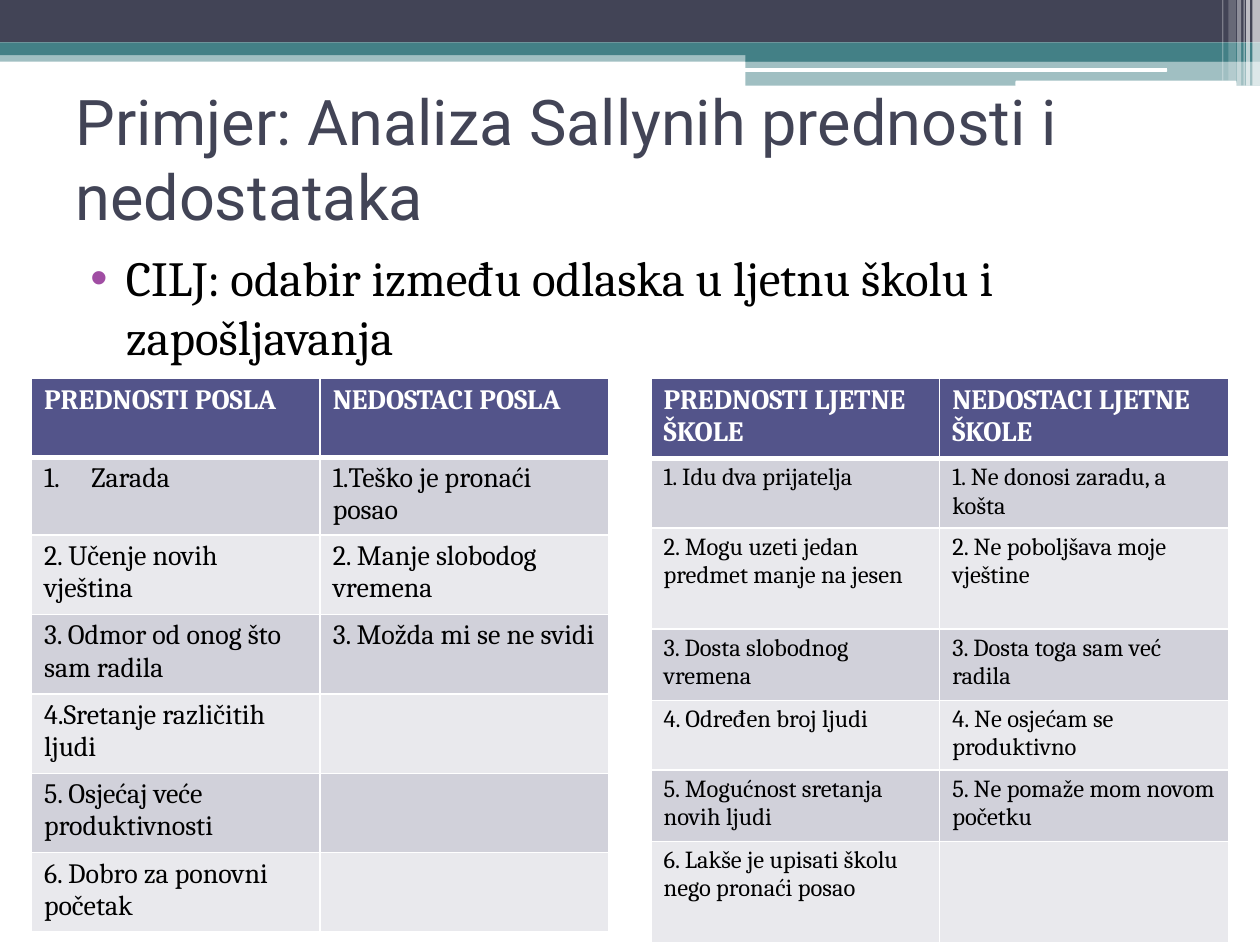
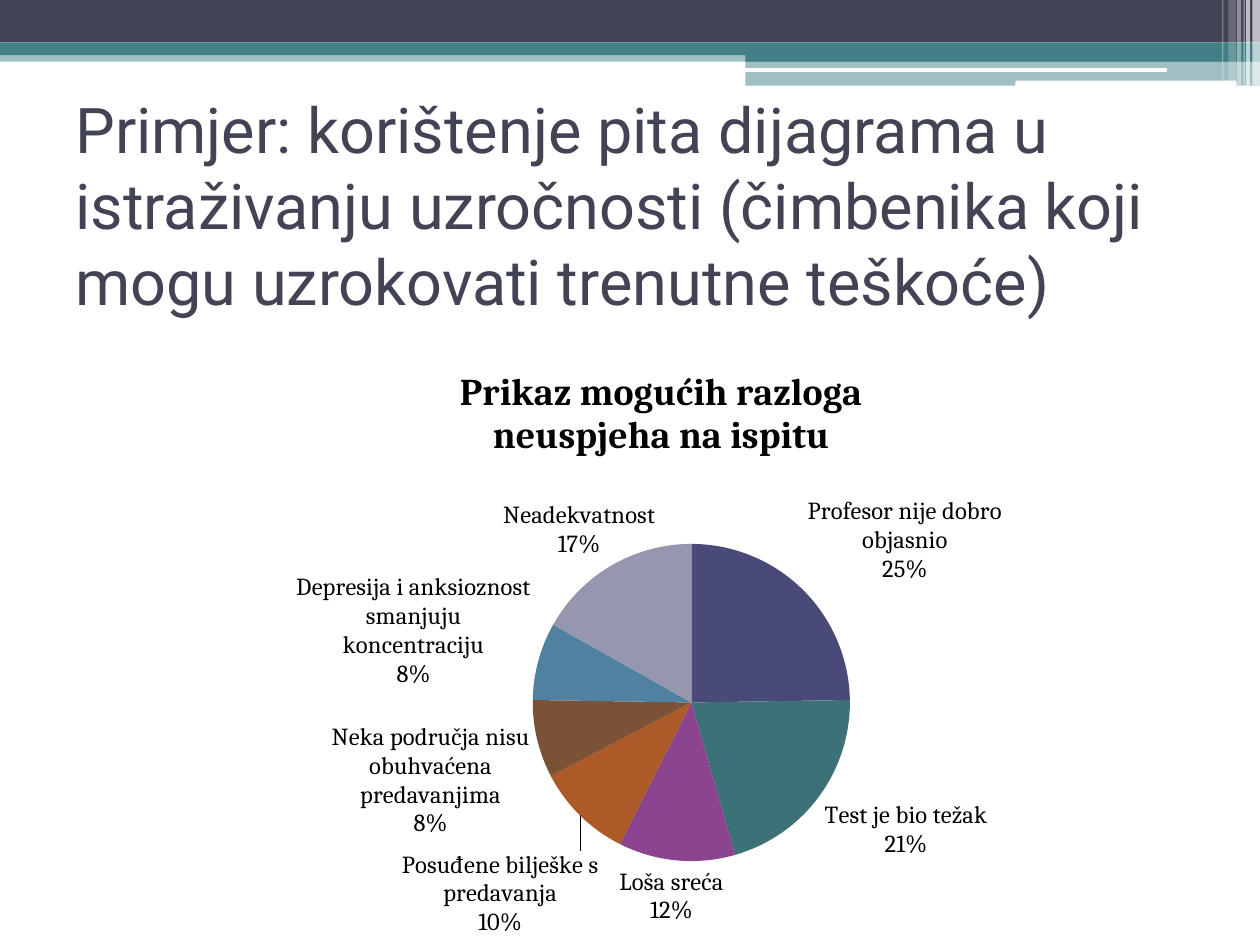
import copy

import pptx
import pptx.chart.data
import pptx.dml.color
import pptx.enum.chart
import pptx.enum.shapes
import pptx.enum.text
import pptx.oxml
import pptx.oxml.ns
import pptx.util
from lxml import etree

Pt = pptx.util.Pt
qn = pptx.oxml.ns.qn
SHAPE = pptx.enum.shapes.MSO_SHAPE

SANS, SERIF = "Roboto", "Cambria"
SLATE, TEAL, WHITE, BLACK, PURPLE = "424456", "438086", "FFFFFF", "000000", "A04DA3"
HEADER, STRIPES = "53548A", ("D1D1DA", "E9E9ED")

# left, top, width, height, colour, opacity in percent
BANDS = [
    (0, 28.8, 720, 6.5, TEAL, 50),
    (0, 0, 720, 24.3, SLATE, 100),
    (0, 24.3, 720, 7.2, TEAL, 100),
    (426, 28.1, 294, 7.2, TEAL, 100),
    (426, 34.6, 294, 14.4, TEAL, 50),
]
PILLS = [
    (425.5, 38.9, 241.4, 2.2, WHITE, 100),
    (580.3, 46.1, 126.3, 3.4, WHITE, 100),
]
# left, width, height, opacity
STRIPS = [
    (715.7, 4.3, 49, 65),
    (712.1, 2.2, 49, 65),
    (710.6, 0.7, 49, 60),
    (707, 2.2, 49, 40),
    (702, 4.3, 46.1, 20),
    (698.4, 0.7, 46.1, 30),
]

ANALYSIS_TITLE = "Primjer: Analiza Sallynih prednosti i nedostataka"
GOAL = "CILJ: odabir između odlaska u ljetnu školu i zapošljavanja"
JOB = {
    "left": 18,
    "size": 16,
    "heights": [45.4, 33.1] + [45.4] * 5,
    "rows": [
        ("PREDNOSTI POSLA", "NEDOSTACI POSLA"),
        ("Zarada", "1.Teško je pronaći posao"),
        ("2. Učenje novih vještina", "2. Manje slobodog vremena"),
        ("3. Odmor od onog što sam radila", "3. Možda mi se ne svidi"),
        ("4.Sretanje različitih ljudi", ""),
        ("5. Osjećaj veće produktivnosti", ""),
        ("6. Dobro za ponovni početak", ""),
    ],
}
SCHOOL = {
    "left": 372,
    "size": 14,
    "heights": [46.1, 25.9, 57.6, 41, 21.6, 41, 57.6],
    "rows": [
        ("PREDNOSTI LJETNE ŠKOLE", "NEDOSTACI LJETNE ŠKOLE"),
        ("1. Idu dva prijatelja", "1. Ne donosi zaradu, a košta"),
        ("2. Mogu uzeti jedan predmet manje na jesen", "2. Ne poboljšava moje vještine"),
        ("3. Dosta slobodnog vremena", "3. Dosta toga sam već radila"),
        ("4. Određen broj ljudi", "4. Ne osjećam se produktivno"),
        ("5. Mogućnost sretanja novih ljudi", "5. Ne pomaže mom novom početku"),
        ("6. Lakše je upisati školu nego pronaći posao", ""),
    ],
}

CAUSES_TITLE = ("Primjer: korištenje pita dijagrama u istraživanju uzročnosti "
                "(čimbenika koji mogu uzrokovati trenutne teškoće)")
CHART_TITLE = ["Prikaz mogućih razloga", "neuspjeha na ispitu"]
# name, percent, colour, label shift as a share of the chart (None: automatic)
CAUSES = [
    ("Profesor nije dobro objasnio", 25, "4A4A79", None),
    ("Test je bio težak", 21, "3C7277", None),
    ("Loša sreća", 12, "8D4490", (0.04, 0)),
    ("Posuđene bilješke s predavanja", 10, "AD5928", (0.02, 0.05)),
    ("Neka područja nisu obuhvaćena predavanjima", 8, "7B5236", (0, -0.03)),
    ("Depresija i anksioznost smanjuju koncentraciju", 8, "5181A0", (0, 0.05)),
    ("Neadekvatnost", 17, "9696AE", (0.04, 0)),
]
PIE_AREA = {"x": 0.39, "y": 0.33, "w": 0.27, "h": 0.53}


def rgb(color):
    return pptx.dml.color.RGBColor.from_string(color)


def box(*lengths):
    return [Pt(v) for v in lengths]


def sub(parent, tag, **attrs):
    el = etree.SubElement(parent, qn(tag))
    for name, value in attrs.items():
        el.set(name, str(value))
    return el


def set_font(font, color, **values):
    font.color.rgb = rgb(color)
    for name, value in values.items():
        setattr(font, name, value)


def write(p, text, color, **values):
    r = p.add_run()
    r.text = text
    set_font(r.font, color, **values)


def indent(p, left, hanging):
    pPr = p._p.get_or_add_pPr()
    pPr.set("marL", str(Pt(left)))
    pPr.set("indent", str(-Pt(hanging)))
    return pPr


def add_bar(s, kind, left, top, width, height, color, opacity):
    sp = s.shapes.add_shape(kind, *box(left, top, width, height))
    sp.shadow.inherit = False
    sp.fill.solid()
    sp.fill.fore_color.rgb = rgb(color)
    sp.line.fill.background()
    if opacity < 100:
        clr = sp._element.spPr.find(qn("a:solidFill"))[0]
        sub(clr, "a:alpha", val=opacity * 1000)


def add_text_box(s, *lengths):
    tf = s.shapes.add_textbox(*box(*lengths)).text_frame
    tf.word_wrap = True
    return tf


def add_slide(prs, title, top, height):
    """Add a slide with the shared top decoration and a title."""
    s = prs.slides.add_slide(prs.slide_layouts[6])
    for band in BANDS:
        add_bar(s, SHAPE.RECTANGLE, *band)
    for pill in PILLS:
        add_bar(s, SHAPE.ROUNDED_RECTANGLE, *pill)
    for left, width, strip_height, opacity in STRIPS:
        add_bar(s, SHAPE.RECTANGLE, left, 0, width, strip_height, WHITE, opacity)
    tf = add_text_box(s, 36, top, 648, height)
    tf.vertical_anchor = pptx.enum.text.MSO_ANCHOR.MIDDLE
    write(tf.paragraphs[0], title, SLATE, size=Pt(36), name=SANS)
    return s


def add_goal(s):
    p = add_text_box(s, 36, 138.2, 648, 379.4).paragraphs[0]
    pPr = indent(p, 28.8, 20.2)
    sub(sub(pPr, "a:buClr"), "a:srgbClr", val=PURPLE)
    sub(pPr, "a:buFont", typeface="Arial")
    sub(pPr, "a:buChar", char="•")
    write(p, GOAL, BLACK, size=Pt(28), name=SERIF)


def add_borders(cell, bottom):
    tcPr = cell._tc.get_or_add_tcPr()
    for side, width in (("L", 1), ("R", 1), ("T", 1), ("B", bottom)):
        ln = sub(tcPr, f"a:ln{side}", w=Pt(width))
        sub(sub(ln, "a:solidFill"), "a:srgbClr", val=WHITE)


def add_pros_cons(s, left, size, heights, rows):
    table = s.shapes.add_table(len(rows), 2, *box(left, 216, 330, sum(heights))).table
    table.first_row = table.horz_banding = False
    for col in table.columns:
        col.width = Pt(165)
    for i, (texts, height) in enumerate(zip(rows, heights)):
        table.rows[i].height = Pt(height)
        head = i == 0
        for cell, text in zip(table.rows[i].cells, texts):
            add_borders(cell, 3 if head else 1)
            cell.margin_top = cell.margin_bottom = Pt(3.6 if head else 3)
            cell.fill.solid()
            cell.fill.fore_color.rgb = rgb(HEADER if head else STRIPES[(i - 1) % 2])
            if text:
                write(cell.text_frame.paragraphs[0], text, WHITE if head else BLACK,
                      size=Pt(16 if head else size), name=SERIF, bold=head)
    return table


def number_first(cell):
    pPr = indent(cell.text_frame.paragraphs[0], 27, 27)
    sub(pPr, "a:buFont", typeface="+mj-lt")
    sub(pPr, "a:buAutoNum", type="arabicPeriod")


def fill_layout(layout, **values):
    manual = sub(layout, "c:manualLayout")
    if "w" in values:
        sub(manual, "c:layoutTarget", val="inner")
        for axis in "xy":
            sub(manual, f"c:{axis}Mode", val="edge")
    for name, value in values.items():
        sub(manual, f"c:{name}", val=value)


def shift_labels(dLbls):
    """Give each shifted label its own entry with the shared label format."""
    shared = [el for el in dLbls if el.tag != qn("c:showLeaderLines")]
    shifts = [(i, cause[3]) for i, cause in enumerate(CAUSES) if cause[3]]
    for place, (i, (x, y)) in enumerate(shifts):
        dLbl = etree.Element(qn("c:dLbl"))
        sub(dLbl, "c:idx", val=i)
        fill_layout(sub(dLbl, "c:layout"), x=x, y=y)
        dLbl.extend(copy.deepcopy(shared))
        dLbls.insert(place, dLbl)


def add_pie(s):
    data = pptx.chart.data.CategoryChartData()
    data.categories = [cause[0] for cause in CAUSES]
    data.add_series("Series 1", [cause[1] for cause in CAUSES])
    chart = s.shapes.add_chart(pptx.enum.chart.XL_CHART_TYPE.PIE,
                               *box(36, 198, 684, 342), data).chart
    set_font(chart.font, BLACK, size=Pt(18), name=SERIF)
    chart.has_legend = False
    chart.has_title = True
    tf = chart.chart_title.text_frame
    for i, line in enumerate(CHART_TITLE):
        p = tf.add_paragraph() if i else tf.paragraphs[0]
        write(p, line, BLACK, size=Pt(21.6), name=SERIF, bold=True)
    chart.chart_title.include_in_layout = False

    plot = chart.plots[0]
    plot.vary_by_categories = True
    series = plot.series[0]
    for i, cause in enumerate(CAUSES):
        fill = series.points[i].format.fill
        fill.solid()
        fill.fore_color.rgb = rgb(cause[2])

    labels = series.data_labels
    settings = {
        "show_value": False, "show_category_name": True, "show_percentage": True,
        "number_format": "0%", "number_format_is_linked": False,
        "position": pptx.enum.chart.XL_LABEL_POSITION.OUTSIDE_END,
    }
    for name, value in settings.items():
        setattr(labels, name, value)
    set_font(labels.font, BLACK, size=Pt(14), name=SERIF)
    dLbls = labels._element
    separator = etree.Element(qn("c:separator"))
    separator.text = "\n"
    dLbls.find(qn("c:showBubbleSize")).addnext(separator)
    shift_labels(dLbls)

    area = chart._chartSpace.find(".//" + qn("c:plotArea"))
    layout = area.find(qn("c:layout"))
    if layout is None:
        layout = etree.Element(qn("c:layout"))
        area.insert(0, layout)
    fill_layout(layout, **PIE_AREA)


def main():
    prs = pptx.Presentation()
    prs.slide_width, prs.slide_height = box(720, 540)
    s = add_slide(prs, ANALYSIS_TITLE, 48.2, 84.2)
    add_goal(s)
    job = add_pros_cons(s, **JOB)
    number_first(job.cell(1, 0))
    add_pros_cons(s, **SCHOOL)
    add_pie(add_slide(prs, CAUSES_TITLE, 59.8, 113.8))
    prs.save("out.pptx")


if __name__ == "__main__":
    main()
